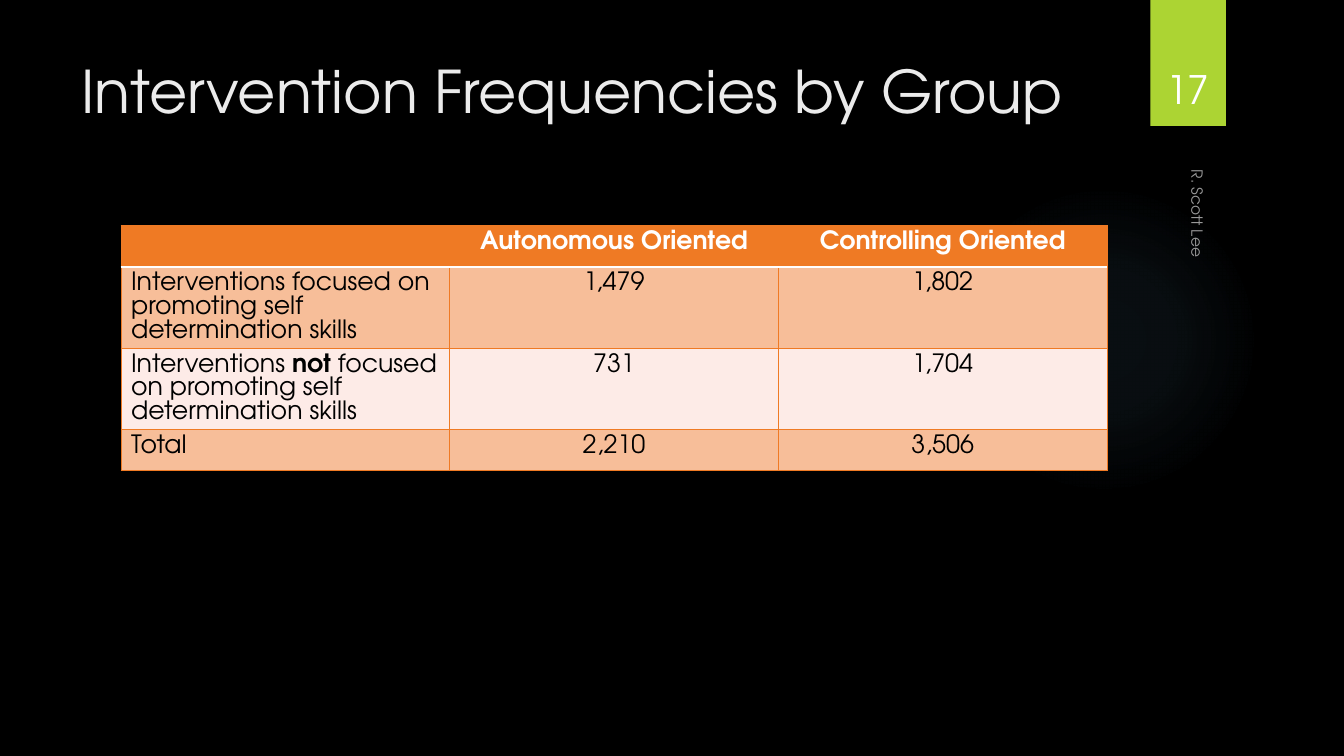
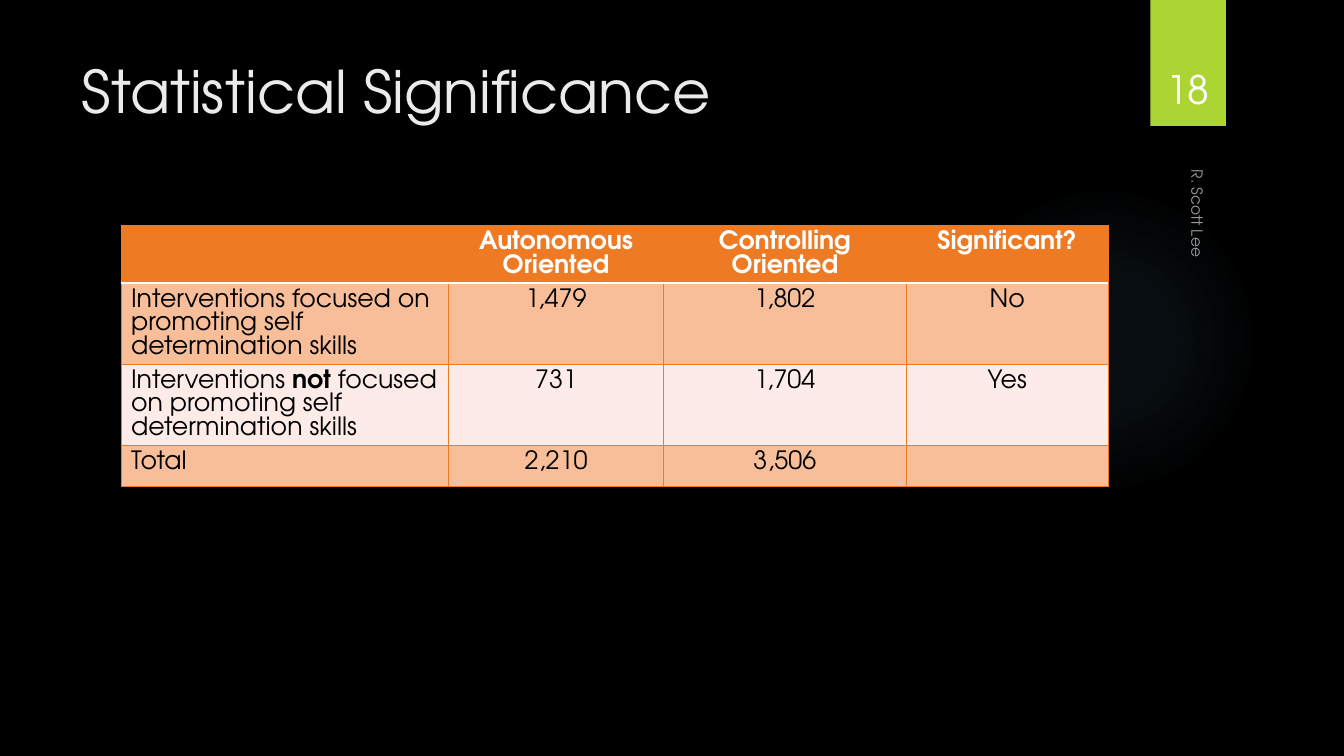
from lxml import etree
from pptx import Presentation
from pptx.dml.color import RGBColor
from pptx.enum.shapes import MSO_SHAPE
from pptx.enum.text import MSO_ANCHOR, PP_ALIGN
from pptx.oxml import parse_xml
from pptx.util import Inches, Pt

OVAL, RECT = MSO_SHAPE.OVAL, MSO_SHAPE.RECTANGLE
TOP, BOTTOM = MSO_ANCHOR.TOP, MSO_ANCHOR.BOTTOM
LEFT, CENTER = PP_ALIGN.LEFT, PP_ALIGN.CENTER

FONT = "TeX Gyre Adventor"
BLACK, WHITE, PALE, GREY = "000000", "FFFFFF", "EBEBEB", "999999"
GREEN, ORANGE, PEACH, BLUSH = "ACD433", "EF7A24", "F7BE99", "FDEBE7"
NS = "http://schemas.openxmlformats.org/drawingml/2006/main"
GLOW = f"""<a:gradFill xmlns:a="{NS}" rotWithShape="1"><a:gsLst>
<a:gs pos="0"><a:srgbClr val="7AC4F0"><a:alpha val="7000"/></a:srgbClr></a:gs>
<a:gs pos="36000"><a:srgbClr val="7AC4F0"><a:alpha val="6000"/></a:srgbClr></a:gs>
<a:gs pos="69000"><a:srgbClr val="7AC4F0"><a:alpha val="0"/></a:srgbClr></a:gs>
</a:gsLst><a:path path="circle"><a:fillToRect l="50000" t="50000" r="50000" b="50000"/>
</a:path></a:gradFill>"""

# Slide content: title, column widths, table rows (*...* marks bold)
FOCUS = "Interventions focused on promoting self determination skills"
OTHER = "Interventions *not* focused on promoting self determination skills"
ROWS = [
    ["", "Autonomous Oriented", "Controlling Oriented"],
    [FOCUS, "1,479", "1,802"],
    [OTHER, "731", "1,704"],
    ["Total", "2,210", "3,506"],
]
VERDICT = ["Significant?", "No", "Yes", ""]
PAGES = [
    ("Intervention Frequencies by Group", [3.26] * 3, ROWS),
    ("Statistical Significance", [3.25, 2.13, 2.41, 2],
     [row + [mark] for row, mark in zip(ROWS, VERDICT)]),
]


def rgb(code):
    return RGBColor.from_string(code)


def write(frame, text, size, color, align=LEFT, bold=False):
    para = frame.paragraphs[0]
    para.alignment = align
    for i, part in enumerate(text.split("*")):
        if part:
            run = para.add_run()
            run.text = part
            font = run.font
            font.name, font.size = FONT, Pt(size)
            font.bold = bold or i % 2 == 1
            font.color.rgb = rgb(color)


deck = Presentation()
deck.slide_width, deck.slide_height = Inches(13.33), Inches(7.5)
back = deck.slide_master.background.fill
back.solid()
back.fore_color.rgb = rgb(BLACK)

for num, (title, widths, rows) in enumerate(PAGES, 17):
    slide = deck.slides.add_slide(deck.slide_layouts[6])
    shapes = slide.shapes

    # Glow and green page tab
    glow = shapes.add_shape(OVAL, Inches(9.41), Inches(1.83), Inches(3.08), Inches(3.08))
    tab = shapes.add_shape(RECT, Inches(11.41), 0, Inches(0.75), Inches(1.25))
    for shape in (glow, tab):
        shape.shadow.inherit = False
        shape.line.fill.background()
    tab.fill.solid()
    tab.fill.fore_color.rgb = rgb(GREEN)
    glow.element.spPr.find(f"{{{NS}}}prstGeom").addnext(parse_xml(GLOW))

    # Title, footer and page number
    for text, box, size, color, anchor, align, turn in [
        (title, (0.71, 0.49, 10.29, 1.53), 42, PALE, TOP, LEFT, 0),
        ("R. Scott Lee", (9.79, 3.53, 4.22, 0.33), 11, GREY, BOTTOM, LEFT, 90),
        (str(num), (11.32, 0.32, 0.92, 0.84), 28, WHITE, BOTTOM, CENTER, 0),
    ]:
        label = shapes.add_textbox(*map(Inches, box))
        label.rotation = turn
        frame = label.text_frame
        frame.word_wrap = True
        frame.vertical_anchor = anchor
        write(frame, text, size, color, align)

    # Table, with exact line spacing so that rows hug their text
    grid = shapes.add_table(len(rows), len(widths), Inches(1.2), Inches(2.24),
                            Inches(9.78), Inches(0.41 * len(rows))).table
    for col, width in zip(grid.columns, widths):
        col.width = Inches(width)
    for r, row in enumerate(rows):
        head = r == 0
        for c, text in enumerate(row):
            cell = grid.cell(r, c)
            write(cell.text_frame, text, 18, WHITE if head else BLACK,
                  CENTER if c else LEFT, head)
            cell.text_frame.paragraphs[0].line_spacing = Pt(16.9)
            # Borders: a white rule under the header, orange elsewhere
            props = cell._tc.get_or_add_tcPr()
            for side in "LRTB":
                rule = (r, side) in ((0, "B"), (1, "T"))
                line = etree.SubElement(props, f"{{{NS}}}ln{side}",
                                        w=str(Pt(1.5 if rule else 0.75)))
                paint = etree.SubElement(line, f"{{{NS}}}solidFill")
                etree.SubElement(paint, f"{{{NS}}}srgbClr", val=WHITE if rule else ORANGE)
            cell.fill.solid()
            cell.fill.fore_color.rgb = rgb(ORANGE if head else PEACH if r % 2 else BLUSH)

deck.save("out.pptx")
